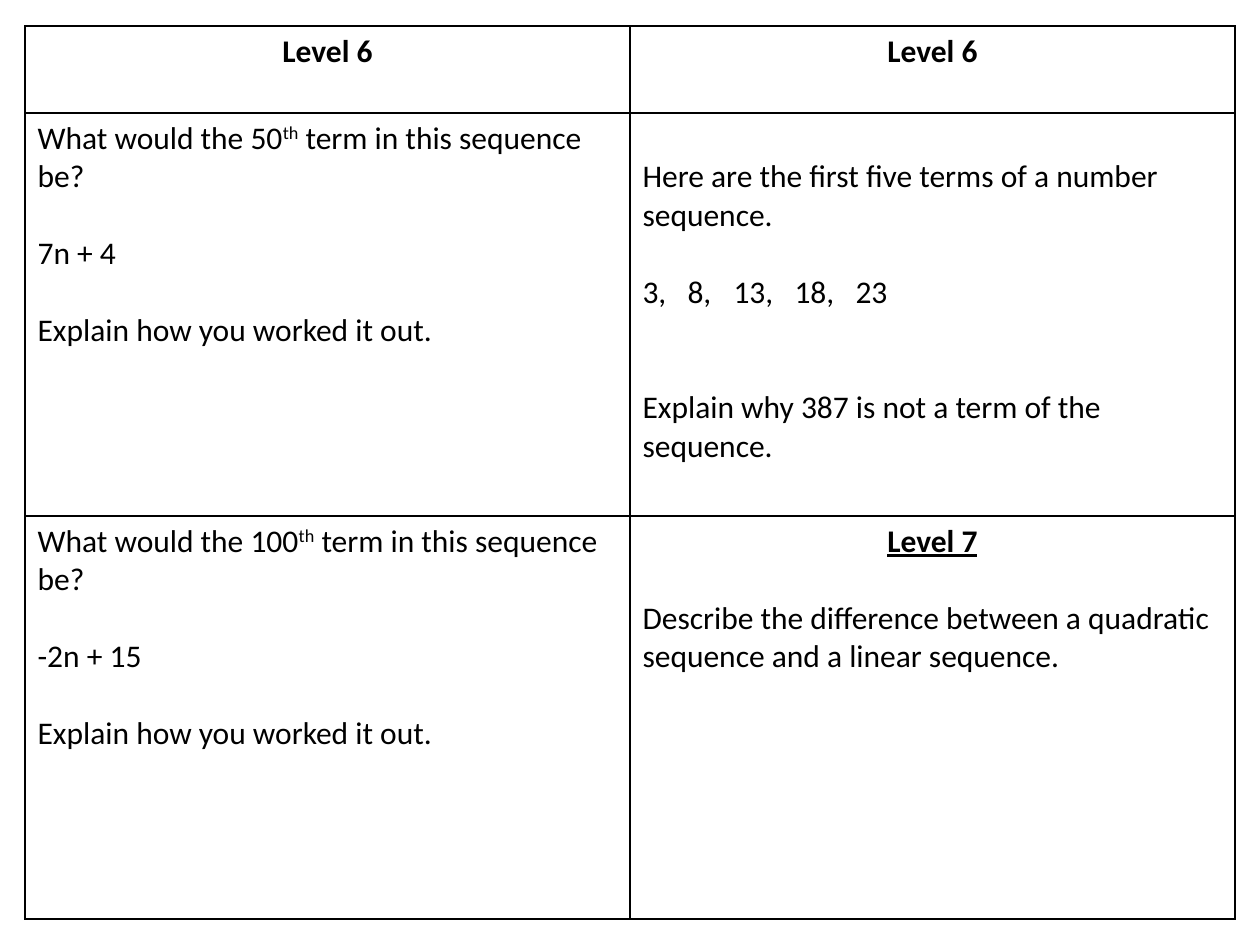
from dataclasses import dataclass

from lxml import etree
from pptx import Presentation
from pptx.dml.color import RGBColor
from pptx.enum.text import PP_ALIGN
from pptx.oxml.ns import qn
from pptx.util import Pt

CENTER, LEFT = PP_ALIGN.CENTER, PP_ALIGN.LEFT
PX = 914400 // 126
BLANK_LAYOUT = 6


@dataclass(frozen=True)
class Theme:
    font: str = "Calibri"
    ink: str = "000000"
    text_size: int = 18
    line_height: int = 22
    border_width: int = 1


@dataclass(frozen=True)
class Line:
    """A paragraph; gap counts the empty lines above it."""
    text: str
    gap: int = 0
    ordinal: str = ""
    rest: str = ""
    heading: bool = False
    underline: bool = False
    tabs: tuple = ()


THEME = Theme()


def px(length):
    return length * PX


def nth_term_question(position, rule):
    return [
        Line(f"What would the {position}", ordinal="th", rest=" term in this sequence be?"),
        Line(rule, gap=1),
        Line("Explain how you worked it out.", gap=1),
    ]


LEVEL_6 = [Line("Level 6", heading=True)]
NOT_A_TERM = [
    Line("Here are the first five terms of a number sequence.", gap=1),
    Line("3,\t8,\t13,\t18,\t23", gap=1, tabs=(45, 91, 152, 213)),
    Line("Explain why 387 is not a term of the sequence.", gap=2),
]
LEVEL_7 = [
    Line("Level 7", heading=True, underline=True),
    Line("Describe the difference between a quadratic sequence and a linear sequence.", gap=1),
]
QUESTIONS = [
    [LEVEL_6, LEVEL_6],
    [nth_term_question(50, "7n + 4"), NOT_A_TERM],
    [nth_term_question(100, "-2n + 15"), LEVEL_7],
]


def add_tab_stops(paragraph, positions):
    properties = paragraph._p.get_or_add_pPr()
    tab_list = etree.Element(qn("a:tabLst"))
    for position in positions:
        etree.SubElement(tab_list, qn("a:tab"), pos=str(px(position)), algn="l")
    # The schema wants tab stops ahead of the default run properties.
    properties.find(qn("a:defRPr")).addprevious(tab_list)


def write_line(paragraph, line):
    paragraph.alignment = CENTER if line.heading else LEFT
    font = paragraph.font
    font.name = THEME.font
    font.size = Pt(THEME.text_size)
    font.color.rgb = RGBColor.from_string(THEME.ink)
    paragraph.add_run().text = line.text
    if line.heading:
        heading_font = paragraph.runs[0].font
        heading_font.bold = True
        heading_font.underline = line.underline
    if line.ordinal:
        ordinal = paragraph.add_run()
        ordinal.text = line.ordinal
        ordinal.font._element.set("baseline", "30000")
        paragraph.add_run().text = line.rest
    if line.tabs:
        add_tab_stops(paragraph, line.tabs)


def fill_cell(cell, lines):
    """Write the lines; a gap above the first becomes cell margin."""
    cell.fill.background()
    cell.margin_top += Pt(lines[0].gap * THEME.line_height)
    frame = cell.text_frame
    for index, line in enumerate(lines):
        paragraph = frame.add_paragraph() if index else frame.paragraphs[0]
        if index:
            paragraph.space_before = Pt(line.gap * THEME.line_height)
        write_line(paragraph, line)


def add_borders(cell):
    properties = cell._tc.get_or_add_tcPr()
    for index, side in enumerate(("lnL", "lnR", "lnT", "lnB")):
        border = etree.Element(qn(f"a:{side}"), w=str(Pt(THEME.border_width)))
        fill = etree.SubElement(border, qn("a:solidFill"))
        etree.SubElement(fill, qn("a:srgbClr"), val=THEME.ink)
        properties.insert(index, border)


def add_question_table(slide, left, top, width, row_heights):
    column_count = len(QUESTIONS[0])
    table = slide.shapes.add_table(
        len(QUESTIONS), column_count, px(left), px(top), px(width), px(sum(row_heights))
    ).table
    table.first_row = False
    table.horz_banding = False
    for column in table.columns:
        column.width = px(width // column_count)
    for row, height, contents in zip(table.rows, row_heights, QUESTIONS):
        row.height = px(height)
        for cell, lines in zip(row.cells, contents):
            fill_cell(cell, lines)
            add_borders(cell)


def main():
    presentation = Presentation()
    presentation.slide_width = px(1260)
    presentation.slide_height = px(945)
    slide = presentation.slides.add_slide(presentation.slide_layouts[BLANK_LAYOUT])
    add_question_table(slide, left=25, top=26, width=1210, row_heights=(87, 403, 403))
    presentation.save("out.pptx")


if __name__ == "__main__":
    main()
